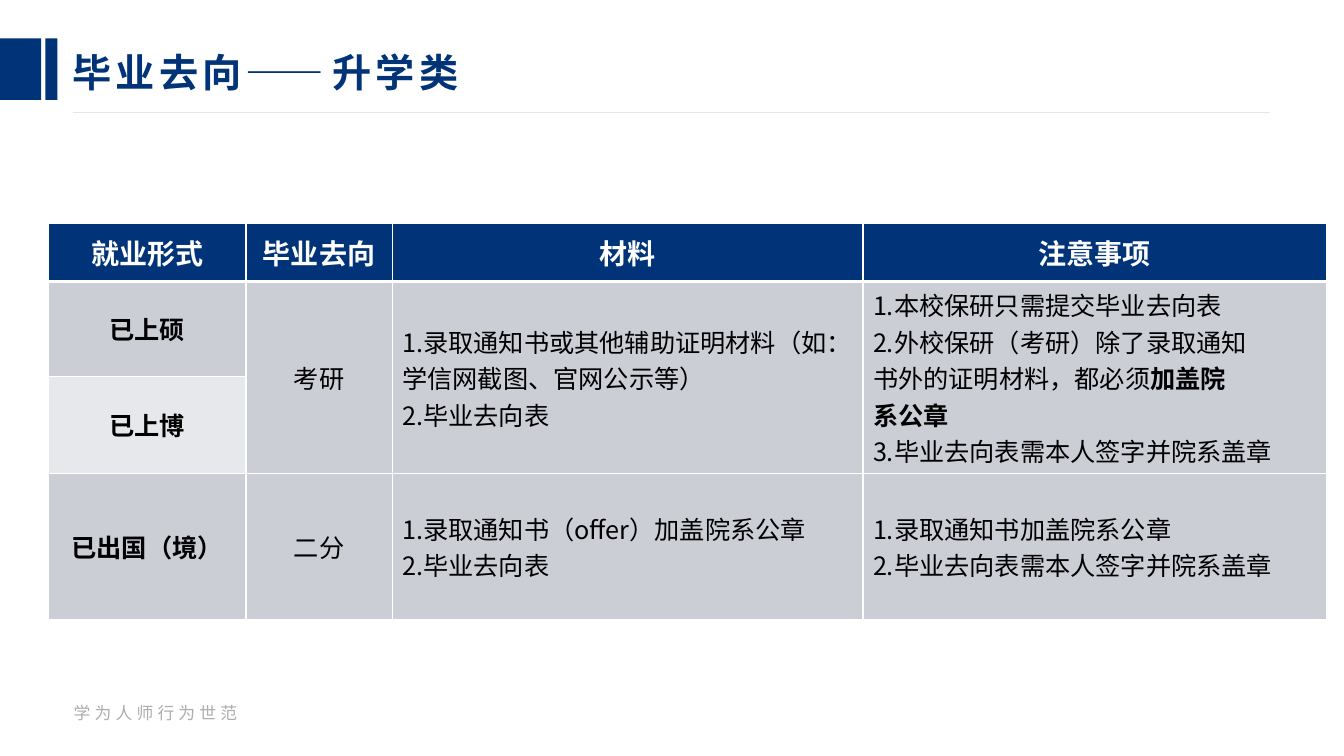
from dataclasses import dataclass

from lxml import etree
from pptx import Presentation
from pptx.dml.color import RGBColor
from pptx.enum.shapes import MSO_CONNECTOR, MSO_SHAPE
from pptx.enum.text import MSO_ANCHOR, PP_ALIGN
from pptx.oxml.ns import qn
from pptx.util import Inches, Pt

RECT = MSO_SHAPE.RECTANGLE
STRAIGHT = MSO_CONNECTOR.STRAIGHT
MIDDLE, TOP = MSO_ANCHOR.MIDDLE, MSO_ANCHOR.TOP
LEFT, CENTER, JUSTIFY = PP_ALIGN.LEFT, PP_ALIGN.CENTER, PP_ALIGN.JUSTIFY


@dataclass(frozen=True)
class Theme:
    font: str = "Noto Sans CJK SC"
    footer_font: str = "Noto Sans CJK JP"
    navy: str = "003378"
    white: str = "FFFFFF"
    black: str = "000000"
    grey: str = "ADADAD"
    rule: str = "E4E6EA"
    band: str = "CCCED6"
    light_band: str = "E7E8EC"
    title: int = 28
    header: int = 20
    body: int = 18
    footer: int = 12


class SlideBuilder:
    """Lengths are percentages of the slide's width (x) or height (y)."""

    def __init__(self, prs, theme):
        self.prs, self.theme = prs, theme
        self.s = prs.slides.add_slide(prs.slide_layouts[6])

    def x(self, share):
        return round(self.prs.slide_width * share / 100)

    def y(self, share):
        return round(self.prs.slide_height * share / 100)

    def box(self, left, top, width, height):
        return self.x(left), self.y(top), self.x(width), self.y(height)

    def style(self, p, size, color, bold=False, font=None, spacing=0):
        name = font or self.theme.font
        f = p.font
        f.size, f.bold, f.name = Pt(size), bold, name
        f.color.rgb = RGBColor.from_string(color)
        props = p._p.pPr.find(qn("a:defRPr"))
        etree.SubElement(props, qn("a:ea")).set("typeface", name)
        if spacing:
            props.set("spc", str(spacing * 100))

    def bar(self, *place):
        sp = self.s.shapes.add_shape(RECT, *self.box(*place))
        sp.shadow.inherit = False
        sp.fill.solid()
        sp.fill.fore_color.rgb = RGBColor.from_string(self.theme.navy)
        sp.line.fill.background()

    def rule(self, left, right, top):
        ln = self.s.shapes.add_connector(
            STRAIGHT, self.x(left), self.y(top), self.x(right), self.y(top))
        ln.line.color.rgb = RGBColor.from_string(self.theme.rule)
        ln.line.width = Pt(0.5)
        etree.SubElement(ln._element.spPr, qn("a:effectLst"))

    def text(self, place, text, size, color, anchor=TOP, align=LEFT,
             line_spacing=None, **look):
        tf = self.s.shapes.add_textbox(*self.box(*place)).text_frame
        tf.word_wrap, tf.vertical_anchor = True, anchor
        tf.margin_left = tf.margin_right = tf.margin_top = tf.margin_bottom = 0
        p = tf.paragraphs[0]
        p.add_run().text = text
        p.alignment = align
        if line_spacing:
            p.line_spacing = line_spacing
        self.style(p, size, color, **look)

    def borders(self, cell, bottom):
        props = cell._tc.get_or_add_tcPr()
        sides = (("L", 1), ("R", 1), ("T", 1), ("B", bottom))
        for i, (side, width) in enumerate(sides):
            ln = etree.Element(qn(f"a:ln{side}"), w=str(Pt(width)))
            fill = etree.SubElement(ln, qn("a:solidFill"))
            etree.SubElement(fill, qn("a:srgbClr")).set("val", self.theme.white)
            props.insert(i, ln)

    def cell(self, cell, text, fill, size, color, bold, align):
        """Fill a cell; ** switches bold on and off within a line."""
        cell.fill.solid()
        cell.fill.fore_color.rgb = RGBColor.from_string(fill)
        cell.vertical_anchor = MIDDLE
        tf = cell.text_frame
        for i, line in enumerate(text.split("\n")):
            p = tf.paragraphs[0] if i == 0 else tf.add_paragraph()
            p.alignment = align
            for j, part in enumerate(line.split("**")):
                if part:
                    r = p.add_run()
                    r.text = part
                    if j % 2:
                        r.font.bold = True
            self.style(p, size, color, bold)

    def table(self, left, top, widths, heights, rows, fills, merges):
        t = self.theme
        place = self.box(left, top, sum(widths), sum(heights))
        tbl = self.s.shapes.add_table(len(heights), len(widths), *place).table
        tbl.horz_banding = False
        for column, width in zip(tbl.columns, widths):
            column.width = self.x(width)
        for row, height in zip(tbl.rows, heights):
            row.height = self.y(height)
        for i, (row, fill) in enumerate(zip(rows, fills)):
            head = i == 0
            for j, text in enumerate(row):
                cell = tbl.cell(i, j)
                self.cell(cell, text, fill,
                          t.header if head else t.body,
                          t.white if head else t.black,
                          bold=head or j == 0,
                          align=CENTER if head or j < 2 else LEFT)
                self.borders(cell, bottom=3 if head else 1)
        for first, last in merges:
            tbl.cell(*first).merge(tbl.cell(*last))


ROWS = [
    ["就业形式", "毕业去向", "材料", "注意事项"],
    ["已上硕", "考研",
     "1.录取通知书或其他辅助证明材料（如：学信网截图、官网公示等）\n2.毕业去向表",
     "1.本校保研只需提交毕业去向表\n2.外校保研（考研）除了录取通知\n"
     "书外的证明材料，都必须**加盖院**\n**系公章**\n"
     "3.毕业去向表需本人签字并院系盖章"],
    ["已上博", "", "", ""],
    ["已出国（境）", "二分",
     "1.录取通知书（offer）加盖院系公章\n2.毕业去向表",
     "1.录取通知书加盖院系公章\n2.毕业去向表需本人签字并院系盖章"],
]


def main():
    prs = Presentation()
    prs.slide_width, prs.slide_height = Inches(13.33), Inches(7.5)
    t = Theme()
    b = SlideBuilder(prs, t)

    # Header bars, rule and footer motto
    for left, width in ((-0.08, 3.15), (3.38, 0.9)):
        b.bar(left, 5.07, width, 8.13)
    b.rule(5.4, 94.52, 14.8)
    b.text((5.48, 92.93, 13.8, 2.67), "学为人师行为世范", t.footer, t.grey,
           font=t.footer_font, spacing=3)

    # Title
    b.text((5.4, 5.07, 75.77, 9.73), "毕业去向——升学类", t.title, t.navy,
           anchor=MIDDLE, align=JUSTIFY, line_spacing=0.9, bold=True, spacing=3)

    # Requirements table; the two degree rows share their last three columns
    b.table(3.6, 29.5,
            widths=(14.7, 10.88, 35.03, 34.51),
            heights=(7.73, 12.53, 12.9, 19.33),
            rows=ROWS,
            fills=(t.navy, t.band, t.light_band, t.band),
            merges=[((1, j), (2, j)) for j in (1, 2, 3)])

    prs.save("out.pptx")


if __name__ == "__main__":
    main()
